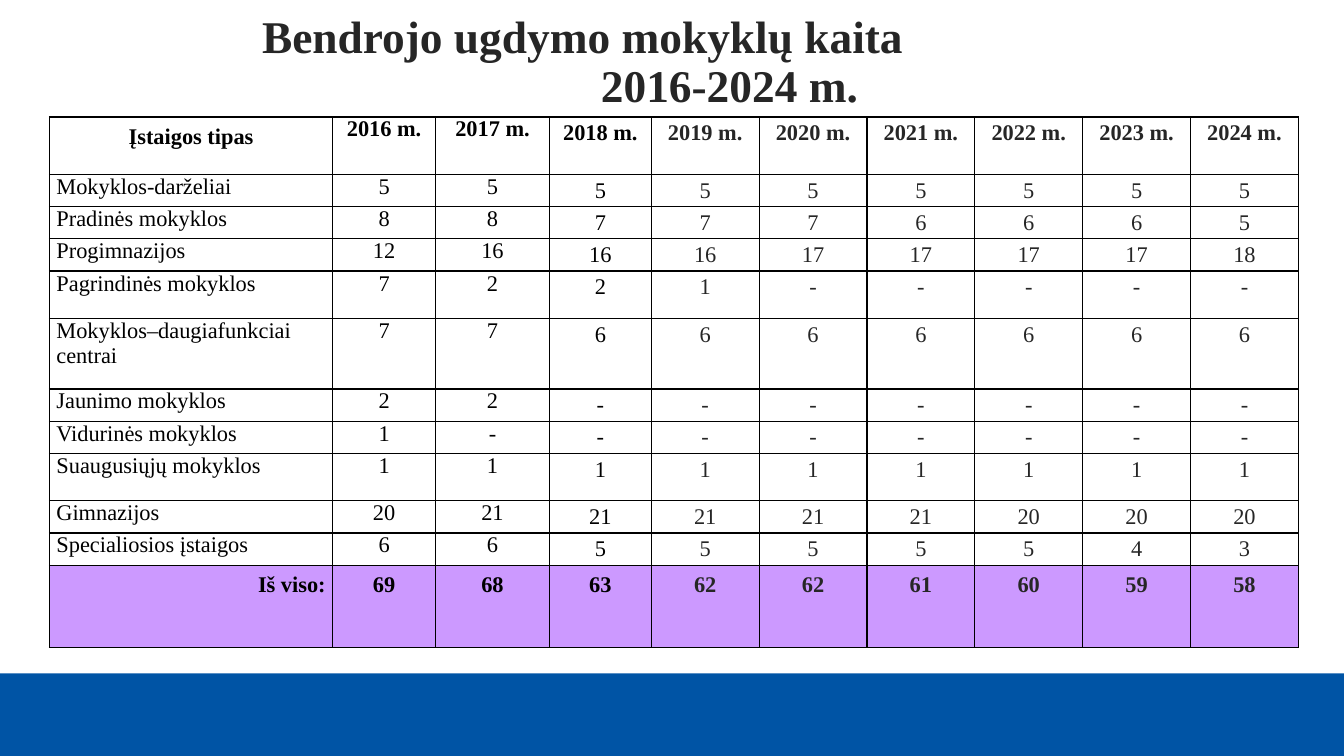
"""Slide with a table of general education schools by type, 2016-2024."""
from lxml.etree import SubElement
from pptx import Presentation
from pptx.dml.color import RGBColor
from pptx.enum.shapes import MSO_SHAPE
from pptx.enum.text import MSO_ANCHOR, MSO_AUTO_SIZE, PP_ALIGN
from pptx.oxml.ns import qn
from pptx.util import Inches, Pt

FONT = "Times New Roman"
BLACK, GREY, BLUE, LILAC = "000000", "262626", "0054A5", "CC99FF"
TITLE = [("Bendrojo ugdymo mokyklų kaita", 0.04), ("2016-2024 m.", 3.4)]
HEADER = ["Įstaigos tipas"] + [f"{year} m." for year in range(2016, 2025)]
SCHOOLS = [
    ("Mokyklos-darželiai", "5 5 5 5 5 5 5 5 5"),
    ("Pradinės mokyklos", "8 8 7 7 7 6 6 6 5"),
    ("Progimnazijos", "12 16 16 16 17 17 17 17 18"),
    ("Pagrindinės mokyklos", "7 2 2 1 - - - - -"),
    ("Mokyklos–daugiafunkciai centrai", "7 7 6 6 6 6 6 6 6"),
    ("Jaunimo mokyklos", "2 2 - - - - - - -"),
    ("Vidurinės mokyklos", "1 - - - - - - - -"),
    ("Suaugusiųjų mokyklos", "1 1 1 1 1 1 1 1 1"),
    ("Gimnazijos", "20 21 21 21 21 21 20 20 20"),
    ("Specialiosios įstaigos", "6 6 5 5 5 5 5 4 3"),
    ("Iš viso:", "69 68 63 62 62 61 60 59 58"),
]
ROWS = [HEADER] + [[name] + counts.split() for name, counts in SCHOOLS]
COL_WIDTHS = [2.81, 1.02, 1.13, 1.01] + [1.07] * 6
ROW_HEIGHTS = [0.57, 0.32, 0.32, 0.32, 0.47, 0.7, 0.32, 0.32, 0.47, 0.32, 0.32, 0.82]
TOTAL = len(ROWS) - 1


def rgb(value):
    return RGBColor.from_string(value)


def add_run(p, text, size, color, bold):
    r = p.add_run()
    r.text = text
    r.font.name, r.font.size, r.font.bold = FONT, Pt(size), bold
    r.font.color.rgb = rgb(color)


def add_borders(cell):
    tc_pr = cell._tc.get_or_add_tcPr()
    for side in ("a:lnL", "a:lnR", "a:lnT", "a:lnB"):
        line = SubElement(tc_pr, qn(side), w=str(Pt(1)))
        fill = SubElement(line, qn("a:solidFill"))
        SubElement(fill, qn("a:srgbClr"), val=BLACK)


def line_spacing(row, col):
    if row == TOTAL or (row == 0 and col == 0):
        return 1.3
    return 1.15 if col >= 3 else 1.0


def alignment(row, col):
    if col or row == 0:
        return PP_ALIGN.CENTER
    return PP_ALIGN.RIGHT if row == TOTAL else PP_ALIGN.LEFT


def format_cell(cell, row, col, text):
    cell.margin_left = cell.margin_right = Inches(0 if col == 2 else 0.07)
    cell.margin_top = cell.margin_bottom = 0
    add_borders(cell)
    if row == TOTAL:
        cell.fill.solid()
        cell.fill.fore_color.rgb = rgb(LILAC)
    else:
        cell.fill.background()
    p = cell.text_frame.paragraphs[0]
    p.alignment = alignment(row, col)
    p.line_spacing = line_spacing(row, col)
    add_run(p, text, 16, GREY if col >= 4 else BLACK, row in (0, TOTAL))


def add_title(s):
    sp = s.shapes.title
    sp.left, sp.top, sp.width, sp.height = map(Inches, (2.46, 0.39, 9, 0.77))
    tf = sp.text_frame
    tf.word_wrap = True
    tf.auto_size = MSO_AUTO_SIZE.NONE
    tf.vertical_anchor = MSO_ANCHOR.BOTTOM
    for i, (text, indent) in enumerate(TITLE):
        p = tf.add_paragraph() if i else tf.paragraphs[0]
        p._p.get_or_add_pPr().set("marL", str(Inches(indent)))
        p.alignment, p.line_spacing = PP_ALIGN.LEFT, 0.9
        add_run(p, text, 32.4, GREY, True)


def add_school_table(s):
    box = map(Inches, (0.49, 1.16, sum(COL_WIDTHS), sum(ROW_HEIGHTS)))
    table = s.shapes.add_table(len(ROWS), len(HEADER), *box).table
    table.first_row = table.horz_banding = False
    for column, width in zip(table.columns, COL_WIDTHS):
        column.width = Inches(width)
    for row, height in zip(table.rows, ROW_HEIGHTS):
        row.height = Inches(height)
    for i, texts in enumerate(ROWS):
        for j, text in enumerate(texts):
            format_cell(table.cell(i, j), i, j, text)


def main():
    prs = Presentation()
    prs.slide_width, prs.slide_height = Inches(13.33), Inches(7.5)
    s = prs.slides.add_slide(prs.slide_layouts[5])
    bar = s.shapes.add_shape(MSO_SHAPE.RECTANGLE, 0, Inches(6.68), prs.slide_width, Inches(0.82))
    bar.shadow.inherit = False
    bar.fill.solid()
    bar.fill.fore_color.rgb = rgb(BLUE)
    bar.line.fill.background()
    add_title(s)
    add_school_table(s)
    prs.save("out.pptx")


if __name__ == "__main__":
    main()
